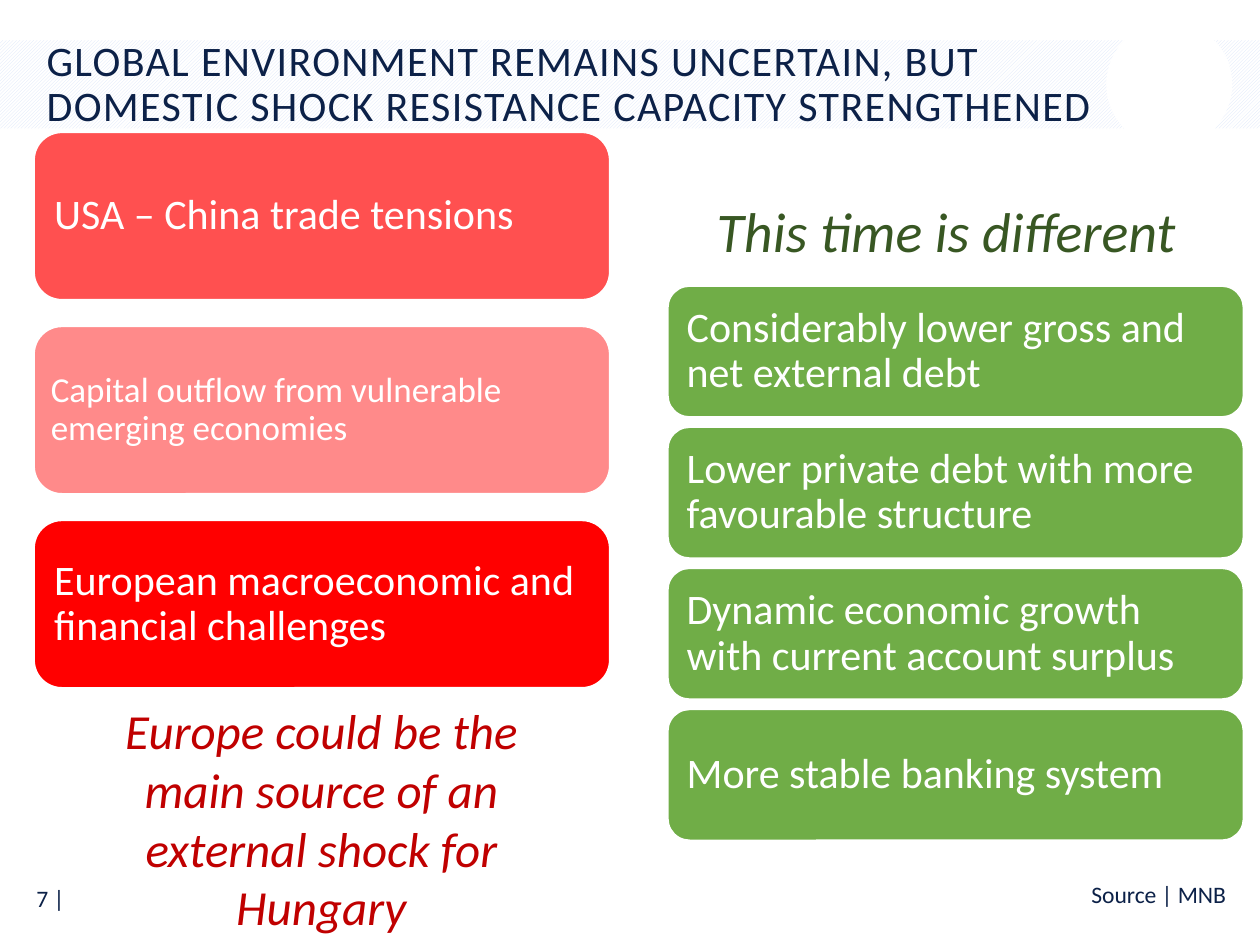
from dataclasses import dataclass

from pptx import Presentation
from pptx.dml.color import RGBColor
from pptx.enum import dml, shapes, text
from pptx.oxml.xmlchemy import OxmlElement
from pptx.util import Inches, Pt


@dataclass(frozen=True)
class Theme:
    font: str = "Calibri"
    navy: str = "0C2148"
    white: str = "FFFFFF"
    band: str = "DAE5F9"
    coral: str = "FF5050"
    pink: str = "FF8A8A"
    red: str = "FF0000"
    green: str = "70AD47"
    dark_green: str = "385723"
    dark_red: str = "C00000"
    heading: float = 24
    minor: float = 20
    verdict: float = 32
    warning: float = 28
    footer: float = 13.5


THEME = Theme()
ALIGN = text.PP_ALIGN
MIDDLE = text.MSO_ANCHOR.MIDDLE
CARD_WIDTH = 4.57


def rgb(value):
    return RGBColor.from_string(value)


def write(shape, wording, size, color, align=ALIGN.LEFT, anchor=MIDDLE,
          spacing=None, italic=False):
    """Put one uniformly formatted paragraph into a shape."""
    frame = shape.text_frame
    frame.word_wrap = True
    frame.auto_size = text.MSO_AUTO_SIZE.NONE
    frame.vertical_anchor = anchor
    paragraph = frame.paragraphs[0]
    paragraph.text = wording
    paragraph.alignment = align
    paragraph.space_before = Pt(0)
    if spacing:
        paragraph.line_spacing = spacing
    paragraph.font.name = THEME.font
    paragraph.font.size = Pt(size)
    paragraph.font.color.rgb = rgb(color)
    paragraph.font.bold = False
    paragraph.font.italic = italic
    return paragraph


def place(shape, left, top, width, height):
    shape.left, shape.top = Inches(left), Inches(top)
    shape.width, shape.height = Inches(width), Inches(height)


def add_label(slide, box, *args, **kwargs):
    label = slide.shapes.add_textbox(*map(Inches, box))
    write(label, *args, **kwargs)


def add_header_band(slide):
    band = slide.shapes.add_shape(
        shapes.MSO_SHAPE.RECTANGLE, 0, Inches(0.32), Inches(10), Inches(0.7))
    band.fill.patterned()
    band.fill.pattern = dml.MSO_PATTERN.LIGHT_UPWARD_DIAGONAL
    band.fill.fore_color.rgb = rgb(THEME.band)
    band.fill.back_color.rgb = rgb(THEME.white)
    disc = slide.shapes.add_shape(
        shapes.MSO_SHAPE.OVAL, Inches(8.78), Inches(0.17), Inches(1), Inches(1))
    disc.fill.solid()
    disc.fill.fore_color.rgb = rgb(THEME.white)
    for shape in (band, disc):
        shape.line.fill.background()
        shape.shadow.inherit = False


def fill_title(slide, wording):
    title = slide.shapes.title
    # Bring the title in front of the band
    title.element.getparent().append(title.element)
    place(title, 0.27, 0.34, 8.58, 0.67)
    paragraph = write(title, wording, THEME.heading, THEME.navy, spacing=0.9)
    paragraph.runs[0]._r.get_or_add_rPr().set("spc", "80")


def fill_source(slide, wording):
    source = slide.placeholders[1]
    place(source, 5.89, 6.91, 3.94, 0.4)
    properties = source.text_frame.paragraphs[0]._p.get_or_add_pPr()
    properties.set("marL", "0")
    properties.set("indent", "0")
    properties.append(OxmlElement("a:buNone"))
    write(source, wording, THEME.footer, THEME.navy, ALIGN.RIGHT, spacing=0.9)


def add_cards(slide, left, top, height, pitch, inset, cards):
    """Stack rounded cards, each given as wording, fill colour and size."""
    for row, (wording, color, size) in enumerate(cards):
        card = slide.shapes.add_shape(
            shapes.MSO_SHAPE.ROUNDED_RECTANGLE, Inches(left),
            Inches(top + row * pitch), Inches(CARD_WIDTH), Inches(height))
        card.shadow.inherit = False
        card.fill.solid()
        card.fill.fore_color.rgb = rgb(color)
        card.line.color.rgb = rgb(THEME.white)
        card.line.width = Pt(1)
        # Remove the preset's own text inset so that only the margins count
        corner = 0.29 * card.adjustments[0] * height
        margin = Inches(inset * size / THEME.heading - corner)
        frame = card.text_frame
        frame.margin_left = frame.margin_right = margin
        frame.margin_top = frame.margin_bottom = margin
        write(card, wording, size, THEME.white, spacing=0.9)


def main():
    presentation = Presentation()
    presentation.slide_width, presentation.slide_height = Inches(10), Inches(7.5)
    slide = presentation.slides.add_slide(presentation.slide_layouts[1])

    # Header and footer
    add_header_band(slide)
    fill_title(slide, "GLOBAL ENVIRONMENT REMAINS UNCERTAIN, BUT "
                      "DOMESTIC SHOCK RESISTANCE CAPACITY STRENGTHENED")
    fill_source(slide, "Source | MNB")
    add_label(slide, (0.01, 6.94, 0.6, 0.37), "7 |", THEME.footer, THEME.navy,
              ALIGN.RIGHT)

    # External risks
    add_cards(slide, 0.27, 1.05, 1.33, 1.54, 0.16, [
        ("USA – China trade tensions", THEME.coral, THEME.heading),
        ("Capital outflow from vulnerable emerging economies",
         THEME.pink, THEME.minor),
        ("European macroeconomic and financial challenges",
         THEME.red, THEME.heading),
    ])
    add_label(slide, (0.52, 5.51, 4.06, 1.99),
              "Europe could be the main source of an external shock for Hungary",
              THEME.warning, THEME.dark_red, ALIGN.CENTER,
              text.MSO_ANCHOR.TOP, italic=True)

    # Domestic strengths
    strengths = ["Considerably lower gross and net external debt",
                 "Lower private debt with more favourable structure",
                 "Dynamic economic growth with current account surplus",
                 "More stable banking system"]
    add_cards(slide, 5.3, 2.27, 1.04, 1.12, 0.15,
              [(item, THEME.green, THEME.heading) for item in strengths])
    add_label(slide, (5.59, 1.51, 4.06, 0.64), "This time is different",
              THEME.verdict, THEME.dark_green, anchor=text.MSO_ANCHOR.TOP,
              italic=True)

    presentation.save("out.pptx")


if __name__ == "__main__":
    main()
